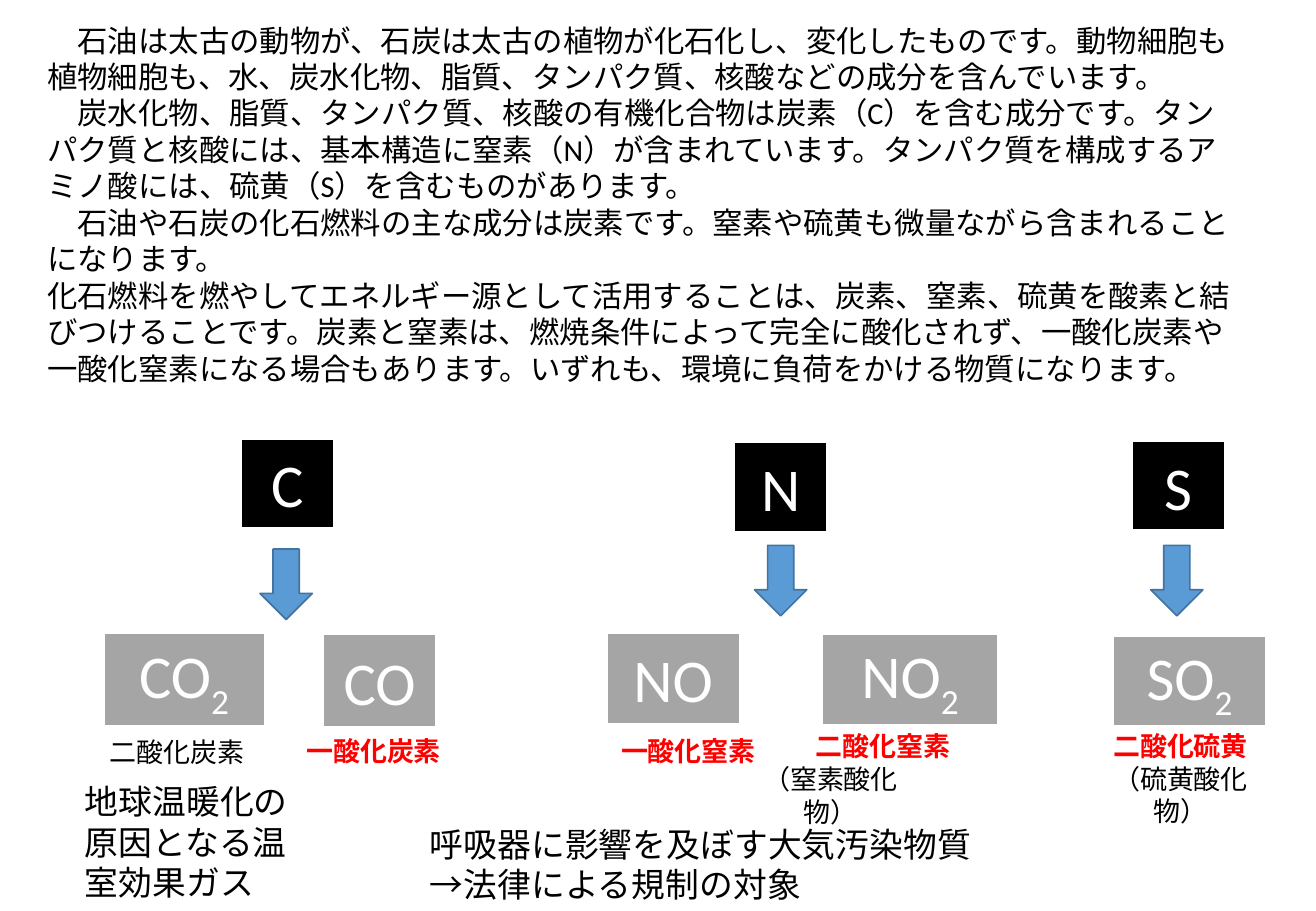
import pptx
import pptx.util
import pptx.dml.color
import pptx.enum.lang
import pptx.enum.shapes
import pptx.enum.text

PX = 9144  # 100 px to the inch
FONT = "Calibri"
COLORS = {
    "black": "000000", "white": "FFFFFF", "gray": "A5A5A5",
    "red": "FF0000", "blue": "5B9BD5", "blue_line": "43739E",
}
SHAPES = pptx.enum.shapes.MSO_SHAPE
CENTER = pptx.enum.text.PP_ALIGN.CENTER

INTRO = [
    "　石油は太古の動物が、石炭は太古の植物が化石化し、変化したものです。動物細胞も植物細胞も、水、炭水化物、脂質、タンパク質、核酸などの成分を含んでいます。",
    "　炭水化物、脂質、タンパク質、核酸の有機化合物は炭素（C）を含む成分です。タンパク質と核酸には、基本構造に窒素（N）が含まれています。タンパク質を構成するアミノ酸には、硫黄（S）を含むものがあります。",
    "　石油や石炭の化石燃料の主な成分は炭素です。窒素や硫黄も微量ながら含まれることになります。",
    "化石燃料を燃やしてエネルギー源として活用することは、炭素、窒素、硫黄を酸素と結びつけることです。炭素と窒素は、燃焼条件によって完全に酸化されず、一酸化炭素や一酸化窒素になる場合もあります。いずれも、環境に負荷をかける物質になります。",
]

# Offsets are measured from the left top corner of each element's box:
# oxide = (formula, subscript, box); label = (box, [(text, color, bold)])
ELEMENTS = [
    dict(box=(60, 361, 323, 277), symbol="C", symbol_at=(138, 0), arrow_at=(154, 91),
         oxides=[("CO", "2", (25, 160, 133, 77)), ("CO", "", (206, 161, 93, 77))],
         labels=[((10, 240, 151, 37), [("二酸化炭素", "black", False)]),
                 ((172, 239, 151, 37), [("一酸化炭素", "red", True)])]),
    dict(box=(491, 364, 331, 296), symbol="N", symbol_at=(113, 0), arrow_at=(130, 85),
         oxides=[("NO", "", (8, 157, 110, 75)), ("NO", "2", (185, 158, 146, 75))],
         labels=[((0, 236, 151, 37), [("一酸化窒素", "red", True)]),
                 ((160, 232, 151, 37), [("二酸化窒素", "red", True)]),
                 ((110, 259, 165, 37), [("（窒素酸化物）", "black", False)])]),
    dict(box=(889, 363, 165, 297), symbol="S", symbol_at=(42, 0), arrow_at=(58, 86),
         oxides=[("SO", "2", (27, 160, 126, 75))],
         labels=[((0, 233, 165, 64), [("二酸化硫黄", "red", True),
                                      ("（硫黄酸化物）", "black", False)])]),
]


def emu(box):
    return [v * PX for v in box]


def rgb(name):
    return pptx.dml.color.RGBColor.from_string(COLORS[name])


def add_text(tf, text, size=18, color="black", bold=False, align=None, sub=""):
    """Add one paragraph, with an optional subscript at its end."""
    p = tf.paragraphs[0] if not tf.text else tf.add_paragraph()
    p.alignment = align
    for part in filter(None, (text, sub)):
        r = p.add_run()
        r.text = part
        r.font.name = FONT
        r.font.size = pptx.util.Pt(size)
        r.font.bold = bold
        r.font.color.rgb = rgb(color)
        r.font.language_id = pptx.enum.lang.MSO_LANGUAGE_ID.JAPANESE
    if sub:
        r._r.get_or_add_rPr().set("baseline", "-25000")


def text_box(s, box):
    tf = s.shapes.add_textbox(*emu(box)).text_frame
    tf.word_wrap = True
    tf.auto_size = pptx.enum.text.MSO_AUTO_SIZE.SHAPE_TO_FIT_TEXT
    return tf


def add_block(s, kind, box, fill, line="white", width=1.5):
    sp = s.shapes.add_shape(kind, *emu(box))
    sp.shadow.inherit = False
    sp.fill.solid()
    sp.fill.fore_color.rgb = rgb(fill)
    sp.line.color.rgb = rgb(line)
    sp.line.width = pptx.util.Pt(width)
    return sp


def formula_block(s, box, fill, formula, sub=""):
    tf = add_block(s, SHAPES.RECTANGLE, box, fill).text_frame
    tf.vertical_anchor = pptx.enum.text.MSO_ANCHOR.MIDDLE
    add_text(tf, formula, size=36, color="white", align=CENTER, sub=sub)


def paragraphs(s, box, lines, size):
    tf = text_box(s, box)
    for line in lines:
        add_text(tf, line, size=size)


def element_group(s, box, symbol, symbol_at, arrow_at, oxides, labels):
    left, top = box[:2]

    def within(x, y, w, h):
        return left + x, top + y, w, h

    # Element and arrow
    formula_block(s, within(*symbol_at, 77, 74), "black", symbol)
    add_block(s, SHAPES.DOWN_ARROW, within(*arrow_at, 43, 58), "blue", "blue_line", 1)
    # Oxides and their names
    for formula, sub, part in oxides:
        formula_block(s, within(*part), "gray", formula, sub)
    for part, lines in labels:
        tf = text_box(s, within(*part))
        for text, color, bold in lines:
            add_text(tf, text, size=16, color=color, bold=bold, align=CENTER)


def main():
    prs = pptx.Presentation()
    prs.slide_width, prs.slide_height = 1083 * PX, 750 * PX
    s = prs.slides.add_slide(prs.slide_layouts[6])
    # Introduction
    paragraphs(s, (29, 13, 1000, 313), INTRO, 18)
    # Elements and what they burn to
    for element in ELEMENTS:
        element_group(s, **element)
    # Effects on the environment
    paragraphs(s, (60, 638, 187, 111), ["地球温暖化の原因となる温室効果ガス"], 20)
    paragraphs(s, (344, 673, 557, 77),
               ["呼吸器に影響を及ぼす大気汚染物質", "→法律による規制の対象"], 20)
    prs.save("out.pptx")


if __name__ == "__main__":
    main()
